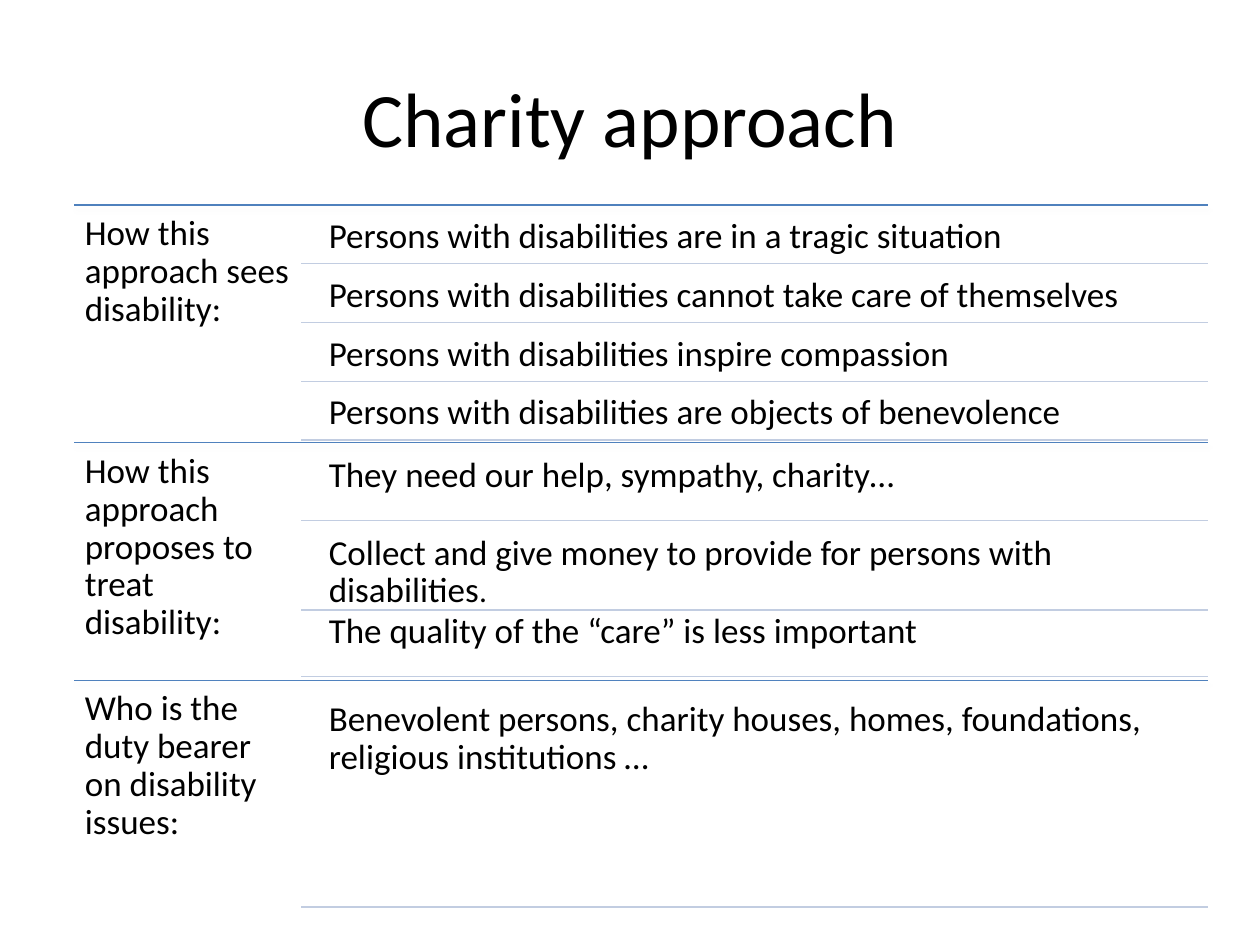
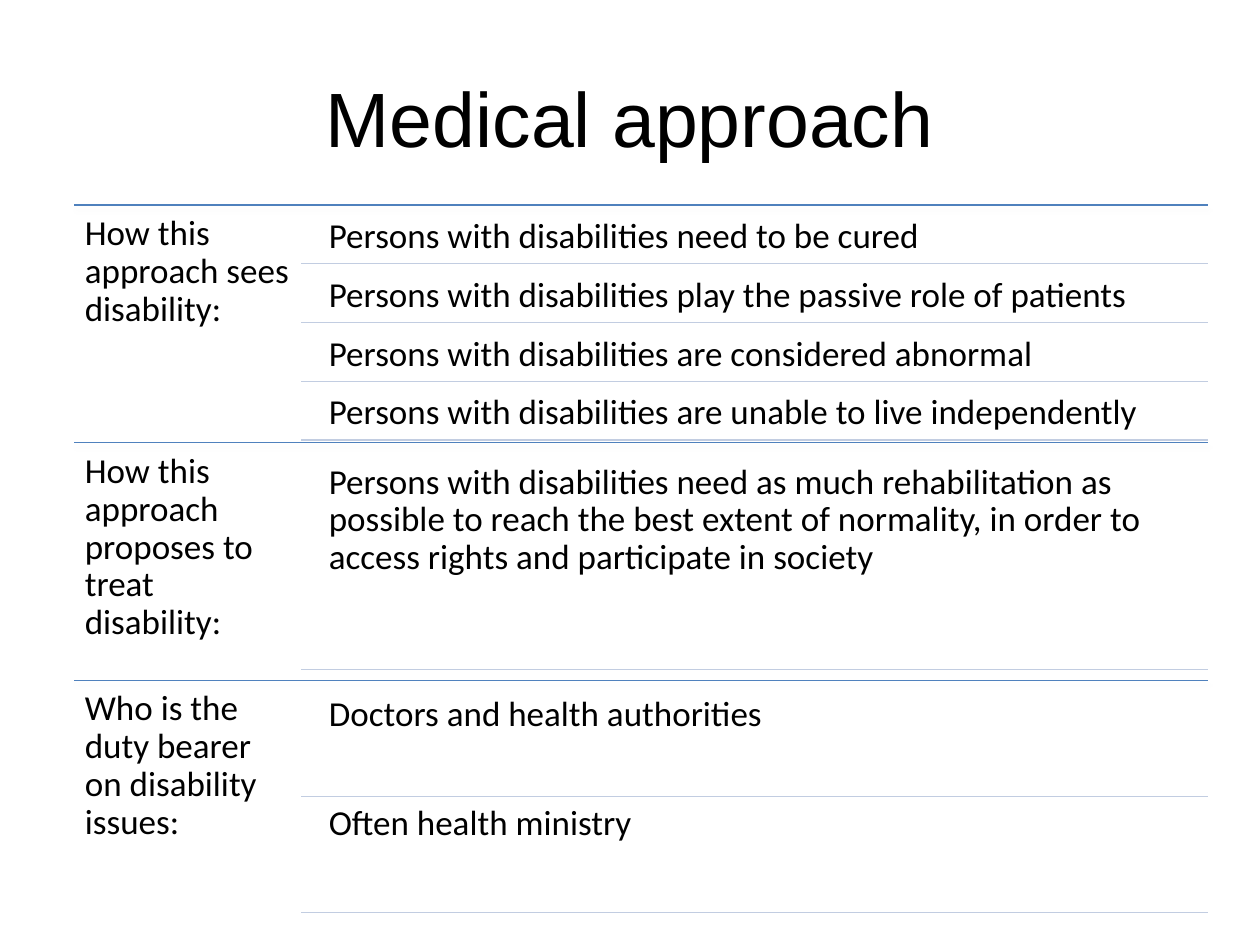
from dataclasses import dataclass

from lxml.etree import SubElement
from pptx import Presentation
from pptx.dml.color import RGBColor
from pptx.enum.text import MSO_ANCHOR, PP_ALIGN
from pptx.oxml.ns import qn
from pptx.slide import Slide
from pptx.util import Pt

BLACK = RGBColor(0x00, 0x00, 0x00)
BLUE = RGBColor(0x4F, 0x81, 0xBD)
PALE_BLUE = RGBColor(0xC2, 0xCD, 0xE1)

BODY_FONT = "Calibri"
LEFT, RIGHT = 42.5, 690.5
TOP, SECTION_HEIGHT = 117.2, 135.75
LABEL_WIDTH = 129.6
RULE_LEFT = LEFT + LABEL_WIDTH
ITEM_LEFT, ITEM_WIDTH = 181.9, 508.6
GAP_RATIO = 0.05  # gap between items, as a share of the item height

LABELS = (
    "How this approach sees disability:",
    "How this approach proposes to treat disability:",
    "Who is the duty bearer on disability issues:",
)


@dataclass(frozen=True)
class RuleStyle:
    color: RGBColor
    shadow_percent: int
    shadow_distance: float


@dataclass(frozen=True)
class Item:
    text: str
    end: str = ""  # closing mark in a smaller size
    text_shift: float = 0
    rule_shift: float = 0


@dataclass(frozen=True)
class Approach:
    title: str
    title_font: str
    sections: tuple[tuple[Item, ...], ...]


SECTION_RULE = RuleStyle(BLUE, 35, 1.8)
ITEM_RULE = RuleStyle(PALE_BLUE, 38, 1.6)

APPROACHES = (
    Approach("Charity approach", "Calibri", (
        (
            Item("Persons with disabilities are in a tragic situation"),
            Item("Persons with disabilities cannot take care of themselves"),
            Item("Persons with disabilities inspire compassion"),
            Item("Persons with disabilities are objects of benevolence"),
        ),
        (
            Item("They need our help, sympathy, charity…"),
            Item("Collect and give money to provide for persons with disabilities",
                 end=".", rule_shift=6.5),
            Item("The quality of the “care” is less important"),
        ),
        (
            Item("Benevolent persons, charity houses, homes, foundations, "
                 "religious institutions …"),
        ),
    )),
    Approach("Medical approach", "Arial", (
        (
            Item("Persons with disabilities need to be cured"),
            Item("Persons with disabilities play the passive role of patients"),
            Item("Persons with disabilities are considered abnormal"),
            Item("Persons with disabilities are unable to live independently"),
        ),
        (
            Item("Persons with disabilities need as much rehabilitation as possible "
                 "to reach the best extent of normality, in order to access rights "
                 "and participate in society"),
        ),
        (
            Item("Doctors and health authorities"),
            Item("Often health ministry", text_shift=-4.2),
        ),
    )),
)


def add_text(s: Slide, text: str, left: float, top: float, width: float,
             height: float, *, size: float = 20, font: str = BODY_FONT,
             end: str = "", end_size: float = 18, inset: float = 6,
             align: PP_ALIGN = PP_ALIGN.LEFT,
             anchor: MSO_ANCHOR = MSO_ANCHOR.TOP,
             line_spacing: float = 0.9, space_after: float = 7) -> None:
    tf = s.shapes.add_textbox(Pt(left), Pt(top), Pt(width), Pt(height)).text_frame
    tf.word_wrap = True
    tf.vertical_anchor = anchor
    tf.margin_left = tf.margin_right = Pt(inset)
    tf.margin_top = tf.margin_bottom = Pt(inset)
    p = tf.paragraphs[0]
    p.alignment = align
    p.line_spacing = line_spacing
    p.space_after = Pt(space_after)
    for part, part_size in ((text, size), (end, end_size)):
        if part:
            r = p.add_run()
            r.text = part
            r.font.size = Pt(part_size)
            r.font.name = font
            r.font.color.rgb = BLACK


def add_rule(s: Slide, left: float, y: float, style: RuleStyle) -> None:
    """Draw a horizontal line to the right margin with a soft shadow below it."""
    line = s.shapes.add_connector(1, Pt(left), Pt(y), Pt(RIGHT), Pt(y))
    line.line.color.rgb = style.color
    line.line.width = Pt(0.75)
    effects = SubElement(line._element.spPr, qn("a:effectLst"))
    shadow = SubElement(effects, qn("a:outerShdw"), blurRad=str(Pt(3.1)),
                        dist=str(Pt(style.shadow_distance)), dir="5400000",
                        rotWithShape="0")
    color = SubElement(shadow, qn("a:srgbClr"), val=str(BLACK))
    SubElement(color, qn("a:alpha"), val=str(style.shadow_percent * 1000))


def add_section(s: Slide, label: str, items: tuple[Item, ...], top: float) -> None:
    """Share the section height among its items, with a gap around each."""
    add_rule(s, LEFT, top, SECTION_RULE)
    add_text(s, label, LEFT, top, LABEL_WIDTH, SECTION_HEIGHT)
    count = len(items)
    height = SECTION_HEIGHT / (count + (count + 1) * GAP_RATIO)
    gap = height * GAP_RATIO
    for i, item in enumerate(items):
        y = top + gap + i * (height + gap)
        add_text(s, item.text, ITEM_LEFT, y + item.text_shift, ITEM_WIDTH, height,
                 end=item.end)
        add_rule(s, RULE_LEFT, y + height + item.rule_shift, ITEM_RULE)


def add_approach(prs: Presentation, approach: Approach) -> None:
    s = prs.slides.add_slide(prs.slide_layouts[6])
    add_text(s, approach.title, 36, 21.6, 648, 90, size=44,
             font=approach.title_font, align=PP_ALIGN.CENTER,
             anchor=MSO_ANCHOR.MIDDLE, line_spacing=1, space_after=0)
    for i, (label, items) in enumerate(zip(LABELS, approach.sections)):
        add_section(s, label, items, TOP + i * SECTION_HEIGHT)


def main() -> None:
    prs = Presentation()
    prs.slide_width, prs.slide_height = Pt(720), Pt(540)
    for approach in APPROACHES:
        add_approach(prs, approach)
    prs.save("out.pptx")


if __name__ == "__main__":
    main()
